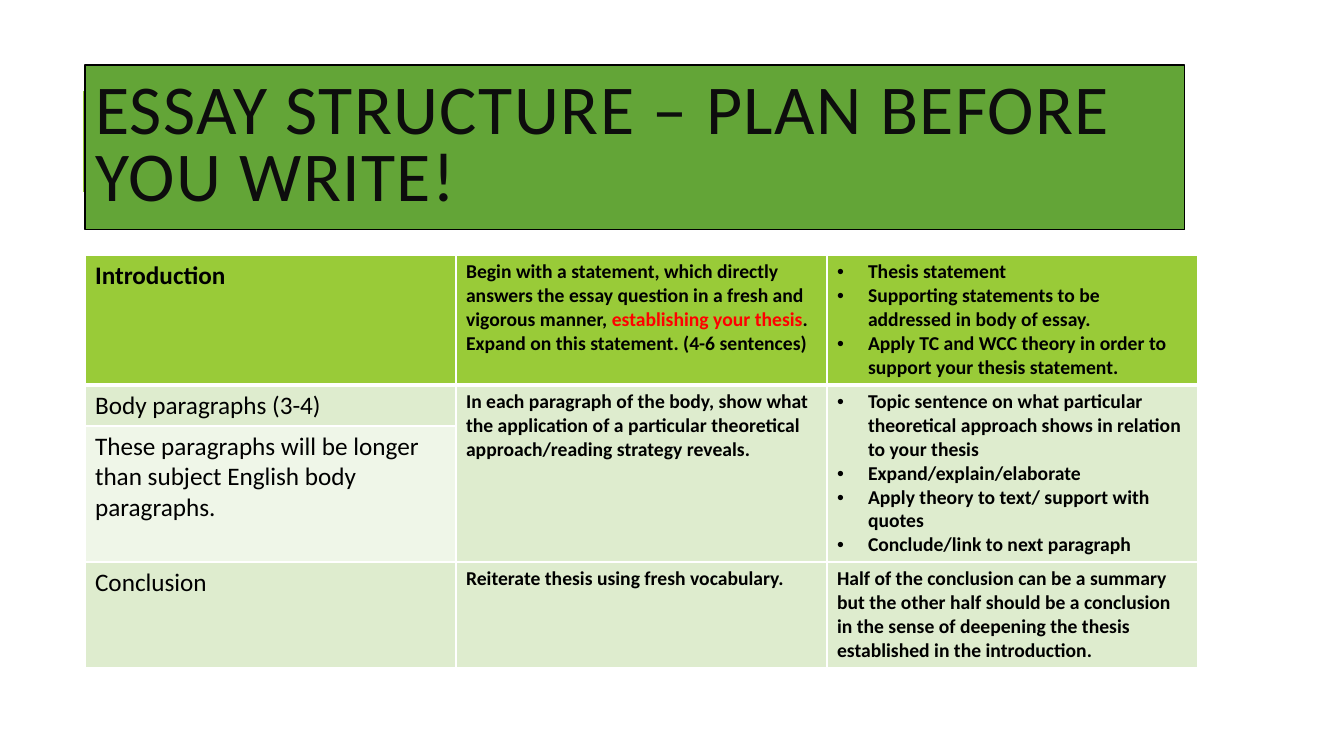
from dataclasses import dataclass

from lxml import etree
from pptx import Presentation
from pptx.dml.color import RGBColor
from pptx.enum.shapes import MSO_CONNECTOR
from pptx.enum.text import MSO_ANCHOR, MSO_AUTO_SIZE, PP_ALIGN
from pptx.oxml.ns import qn
from pptx.presentation import Presentation as PresentationType
from pptx.slide import Slide
from pptx.table import _Cell as Cell
from pptx.text.text import _Paragraph as Paragraph, _Run as Run
from pptx.util import Emu, Pt

STRAIGHT = MSO_CONNECTOR.STRAIGHT
LEFT = PP_ALIGN.LEFT
MIDDLE = MSO_ANCHOR.MIDDLE
NO_AUTOFIT = MSO_AUTO_SIZE.NONE
TITLE_ONLY_LAYOUT = 5
PX_PER_INCH = 100.8


@dataclass(frozen=True)
class Theme:
    font: str = "Calibri"
    title_fill: str = "63A537"
    title_text: str = "0D0D0D"
    lime: str = "99CB38"
    band: str = "DEECCE"
    pale_band: str = "EFF6E8"
    black: str = "000000"
    white: str = "FFFFFF"
    red: str = "FF0000"
    title_size: int = 50
    label_size: int = 18
    detail_size: int = 14


@dataclass(frozen=True)
class CellSpec:
    row: int
    column: int
    paragraphs: tuple[str, ...]
    bulleted: bool = False
    row_span: int = 1
    highlight: str = ""


THEME = Theme()
ROW_HEIGHTS = (130, 41, 135, 106)
ROW_FILLS = (THEME.lime, THEME.band, THEME.pale_band, THEME.band)
COLUMN_WIDTH = 371
COLUMN_COUNT = 3
BULLET_INDENT = 31

CELLS = (
    CellSpec(0, 0, ("Introduction",)),
    CellSpec(0, 1, (
        "Begin with a statement, which directly answers the essay question in a fresh "
        "and vigorous manner, establishing your thesis. Expand on this statement. "
        "(4-6 sentences)",), highlight="establishing your thesis"),
    CellSpec(0, 2, (
        "Thesis statement",
        "Supporting statements to be addressed in body of essay.",
        "Apply TC and WCC theory in order to support your thesis statement."),
        bulleted=True),
    CellSpec(1, 0, ("Body paragraphs (3-4)",)),
    CellSpec(1, 1, (
        "In each paragraph of the body, show what the application of a particular "
        "theoretical approach/reading strategy reveals.",), row_span=2),
    CellSpec(1, 2, (
        "Topic sentence on what particular theoretical approach shows in relation to "
        "your thesis",
        "Expand/explain/elaborate",
        "Apply theory to text/ support with quotes",
        "Conclude/link to next paragraph"), bulleted=True, row_span=2),
    CellSpec(2, 0, (
        "These paragraphs will be longer than subject English body paragraphs.",)),
    CellSpec(3, 0, ("Conclusion",)),
    CellSpec(3, 1, ("Reiterate thesis using fresh vocabulary.",)),
    CellSpec(3, 2, (
        "Half of the conclusion can be a summary but the other half should be a "
        "conclusion in the sense of deepening the thesis established in the "
        "introduction.",)),
)


def px(length: int) -> Emu:
    return Emu(round(length * 914400 / PX_PER_INCH))


def rgb(color: str) -> RGBColor:
    return RGBColor.from_string(color)


def format_run(run: Run, size: int, color: str, bold: bool = False) -> None:
    run.font.name = THEME.font
    run.font.size = Pt(size)
    run.font.bold = bold
    run.font.color.rgb = rgb(color)


def add_title(slide: Slide) -> None:
    title = slide.shapes.title
    title.left, title.top, title.width, title.height = map(px, (85, 65, 1100, 165))
    title.fill.solid()
    title.fill.fore_color.rgb = rgb(THEME.title_fill)
    title.line.color.rgb = rgb(THEME.black)
    title.line.width = Pt(0.75)
    frame = title.text_frame
    frame.text = "ESSAY STRUCTURE – PLAN BEFORE YOU WRITE!"
    frame.word_wrap = True
    frame.auto_size = NO_AUTOFIT
    frame.vertical_anchor = MIDDLE
    paragraph = frame.paragraphs[0]
    paragraph.alignment = LEFT
    paragraph.line_spacing = 0.8
    run = paragraph.runs[0]
    format_run(run, THEME.title_size, THEME.title_text)
    run.font._element.set("spc", "100")


def add_accent_line(slide: Slide) -> None:
    """Draw the vertical accent line behind the title."""
    line = slide.shapes.add_connector(STRAIGHT, px(84), px(192), px(84), px(91))
    line.line.color.rgb = rgb(THEME.lime)
    line.line.width = Pt(1.5)
    etree.SubElement(line.element.spPr, qn("a:effectLst"))
    slide.shapes.title.element.addprevious(line.element)


def style_cell(cell: Cell, row: int) -> None:
    """Set the borders first, as the schema wants them ahead of the fill."""
    properties = cell._tc.get_or_add_tcPr()
    widths = {"L": 1, "R": 1, "T": 3 if row == 1 else 1, "B": 3 if row == 0 else 1}
    for side, width in widths.items():
        border = etree.SubElement(properties, qn(f"a:ln{side}"), w=str(Pt(width)))
        fill = etree.SubElement(border, qn("a:solidFill"))
        etree.SubElement(fill, qn("a:srgbClr"), val=THEME.white)
    cell.fill.solid()
    cell.fill.fore_color.rgb = rgb(ROW_FILLS[row])


def add_bullet(paragraph: Paragraph) -> None:
    properties = paragraph._p.get_or_add_pPr()
    properties.set("marL", str(px(BULLET_INDENT)))
    properties.set("indent", str(-px(BULLET_INDENT)))
    etree.SubElement(properties, qn("a:buFont"), typeface="Arial")
    etree.SubElement(properties, qn("a:buChar"), char="•")


def fill_paragraph(paragraph: Paragraph, text: str, spec: CellSpec) -> None:
    is_label = spec.column == 0
    size = THEME.label_size if is_label else THEME.detail_size
    bold = not is_label or spec.row == 0
    if spec.highlight:
        before, after = text.split(spec.highlight)
        parts = (before, spec.highlight, after)
    else:
        parts = (text,)
    for part in parts:
        run = paragraph.add_run()
        run.text = part
        color = THEME.red if part == spec.highlight else THEME.black
        format_run(run, size, color, bold)
    if spec.bulleted:
        add_bullet(paragraph)


def add_essay_table(slide: Slide) -> None:
    frame = slide.shapes.add_table(
        len(ROW_HEIGHTS), COLUMN_COUNT, px(85), px(255),
        px(COLUMN_WIDTH * COLUMN_COUNT), px(sum(ROW_HEIGHTS)))
    table = frame.table
    table.first_row = False
    table.horz_banding = False
    for column in table.columns:
        column.width = px(COLUMN_WIDTH)
    for row, height in enumerate(ROW_HEIGHTS):
        table.rows[row].height = px(height)
        for column in range(COLUMN_COUNT):
            style_cell(table.cell(row, column), row)
    for spec in CELLS:
        cell = table.cell(spec.row, spec.column)
        if spec.row_span > 1:
            cell.merge(table.cell(spec.row + spec.row_span - 1, spec.column))
        for index, text in enumerate(spec.paragraphs):
            text_frame = cell.text_frame
            paragraph = text_frame.add_paragraph() if index else text_frame.paragraphs[0]
            fill_paragraph(paragraph, text, spec)


def build_presentation() -> PresentationType:
    presentation = Presentation()
    presentation.slide_width, presentation.slide_height = px(1344), px(756)
    slide = presentation.slides.add_slide(presentation.slide_layouts[TITLE_ONLY_LAYOUT])
    add_title(slide)
    add_accent_line(slide)
    add_essay_table(slide)
    return presentation


if __name__ == "__main__":
    build_presentation().save("out.pptx")
